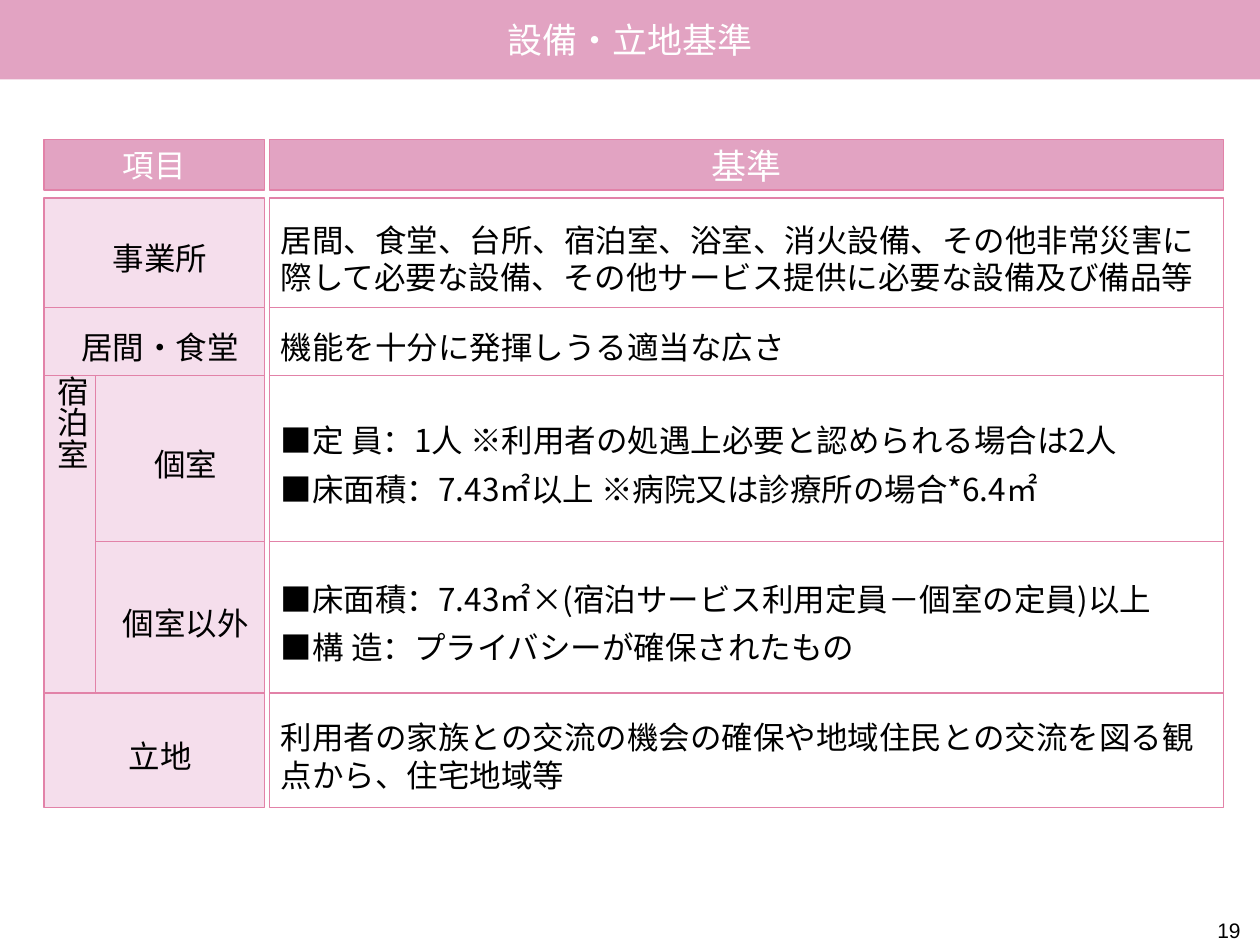
from pptx import Presentation
from pptx.dml.color import RGBColor
from pptx.enum import shapes, text
from pptx.oxml.ns import qn
from pptx.util import Pt
from lxml import etree

JP, LATIN = "Noto Sans CJK JP", "Arial"
PINK, PALE, EDGE = "E2A3C2", "F5DEEC", "E282A8"
WHITE, BLACK = "FFFFFF", "000000"
LEFT, CENTER, RIGHT = text.PP_ALIGN.LEFT, text.PP_ALIGN.CENTER, text.PP_ALIGN.RIGHT

# Content
TITLE = "設備・立地基準"
HEADINGS = [("項目", 18), ("基準", 20)]
GROUP = "宿泊室"
PAGE = "19"
# item, inside the group, height, criteria
ROWS = [
    ("事業所", False, 62.5, ["居間、食堂、台所、宿泊室、浴室、消火設備、その他非常災害に際して"
                          "必要な設備、その他サービス提供に必要な設備及び備品等"]),
    ("居間・食堂", False, 39, ["機能を十分に発揮しうる適当な広さ"]),
    ("個室", True, 95, ["■定 員：1人 ※利用者の処遇上必要と認められる場合は2人",
                      "■床面積：7.43㎡以上 ※病院又は診療所の場合*6.4㎡"]),
    ("個室以外", True, 86.4, ["■床面積：7.43㎡×(宿泊サービス利用定員－個室の定員)以上",
                          "■構 造：プライバシーが確保されたもの"]),
    ("立地", False, 65.5, ["利用者の家族との交流の機会の確保や地域住民との交流を図る観点から、"
                         "住宅地域等"]),
]

# Layout
ITEM_X, ITEM_W = 25.2, 126
RULE_X, RULE_W = 154.1, 545
GROUP_W = 29.5
HEAD_Y, HEAD_H, BODY_Y = 79.9, 28.8, 113.1
BODY_INSETS = (6.5, 6.5, 0, 0)
BODY_LINE = 21.6

prs = Presentation()
prs.slide_width, prs.slide_height = Pt(720), Pt(540)
slide = prs.slides.add_slide(prs.slide_layouts[6])


def rgb(value):
    return RGBColor.from_string(value)


def write(frame, lines, size, color, align, font=JP, insets=(0, 0, 0, 0),
          line_height=None, after=0):
    frame.margin_left, frame.margin_top, frame.margin_right, frame.margin_bottom = map(Pt, insets)
    frame.vertical_anchor = text.MSO_ANCHOR.MIDDLE
    for i, line in enumerate(lines):
        para = frame.add_paragraph() if i else frame.paragraphs[0]
        para.alignment = align
        if line_height:
            para.line_spacing = Pt(line_height)
        if after:
            para.space_after = Pt(after)
        run = para.add_run()
        run.text = line
        run.font.name, run.font.size = font, Pt(size)
        run.font.color.rgb = rgb(color)
        etree.SubElement(run.font._element, qn("a:ea")).set("typeface", font)


def box(x, y, w, h, fill, edge=EDGE):
    rect = slide.shapes.add_shape(shapes.MSO_SHAPE.RECTANGLE, Pt(x), Pt(y), Pt(w), Pt(h))
    rect.shadow.inherit = False
    rect.fill.solid()
    rect.fill.fore_color.rgb = rgb(fill)
    if edge:
        rect.line.color.rgb = rgb(edge)
        rect.line.width = Pt(0.75)
    else:
        rect.line.fill.background()
    rect.text_frame.word_wrap = True
    return rect.text_frame


# Title band
write(box(0, 0, 720, 45.4, PINK, None), [TITLE], 20, WHITE, CENTER)

# Column headings
for (heading, size), x, w in zip(HEADINGS, (ITEM_X, RULE_X), (ITEM_W, RULE_W)):
    write(box(x, HEAD_Y, w, HEAD_H, PINK), [heading], size, WHITE, CENTER)

# Rows of items and criteria
y = BODY_Y
group_spans = []
for item, grouped, height, criteria in ROWS:
    indent = GROUP_W if grouped else 0
    if grouped:
        group_spans.append((y, y + height))
    write(box(ITEM_X + indent, y, ITEM_W - indent, height, PALE), [item],
          18, BLACK, CENTER, insets=BODY_INSETS, line_height=BODY_LINE)
    write(box(RULE_X, y, RULE_W, height, WHITE), criteria, 18, BLACK, LEFT,
          insets=BODY_INSETS, line_height=BODY_LINE, after=6 if len(criteria) > 1 else 0)
    y += height

# Vertical label beside the grouped rows
top, bottom = group_spans[0][0], group_spans[-1][1]
group_label = box(ITEM_X, top, GROUP_W, bottom - top, PALE)
write(group_label, [GROUP], 18, BLACK, LEFT, insets=(2, 0, 0, 0))
group_label._txBody.bodyPr.set("vert", "eaVert")

# Page number
page = slide.shapes.add_textbox(Pt(695), Pt(524.2), Pt(14), Pt(14.4)).text_frame
page.word_wrap = False
write(page, [PAGE], 12, BLACK, RIGHT, font=LATIN)

prs.save("out.pptx")
